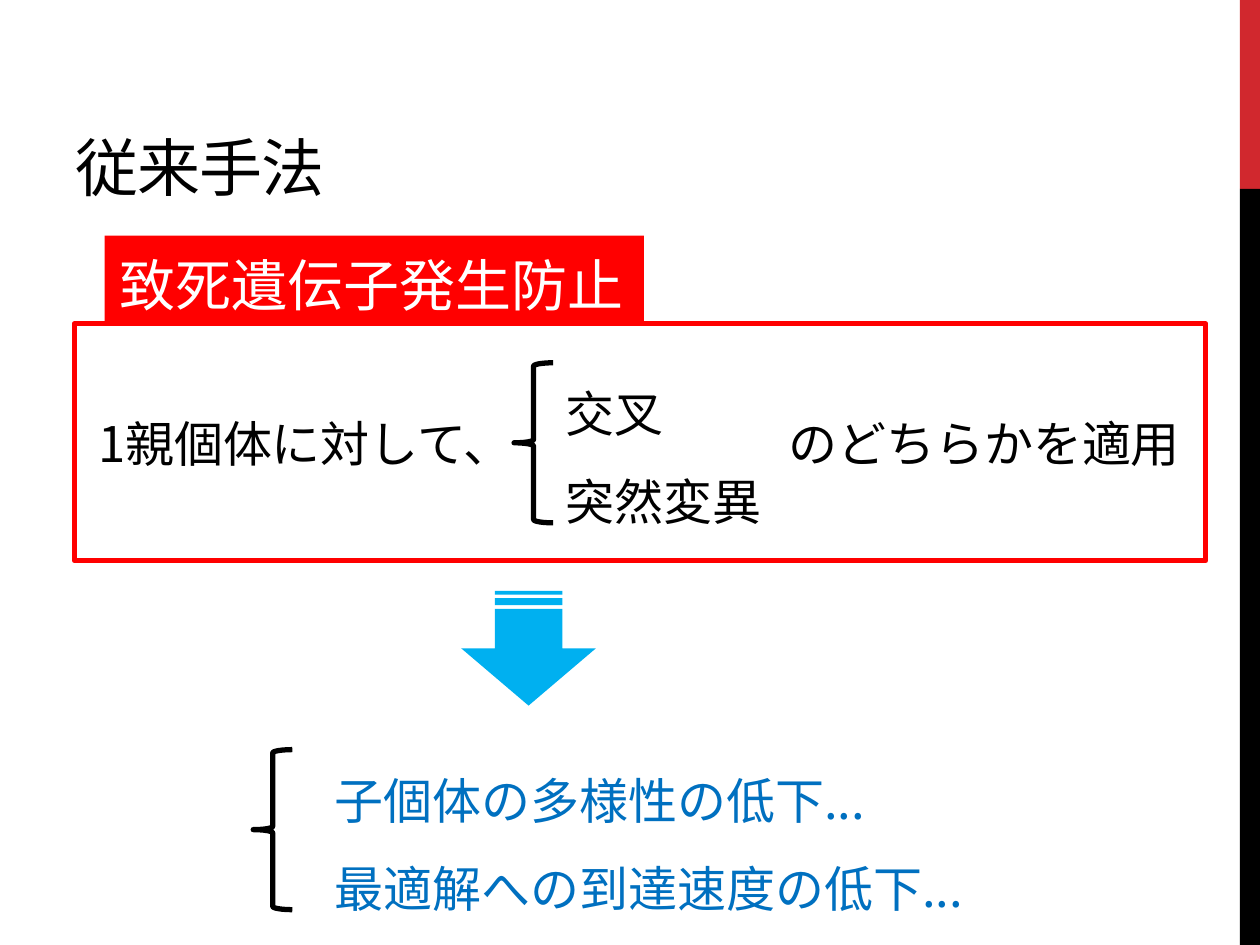
from lxml.etree import SubElement
from pptx import Presentation
from pptx.dml.color import RGBColor
from pptx.enum.shapes import MSO_SHAPE as Preset
from pptx.enum.text import MSO_ANCHOR as Anchor, MSO_AUTO_SIZE as AutoSize, PP_ALIGN as Align
from pptx.oxml.ns import qn
from pptx.util import Inches, Pt

FONT = "Noto Sans CJK JP"
BLACK, WHITE, RED, CRIMSON = "000000", "FFFFFF", "FF0000", "D1282E"
BLUE, SKY = "0070C0", "00B0F0"


def color(value):
    return RGBColor.from_string(value)


def apply_format(target, values):
    for name, value in values.items():
        setattr(target, name, value)


def add_preset(slide, preset, box, fill=None, line=None, rotation=0):
    shape = slide.shapes.add_shape(preset, *map(Inches, box))
    shape.shadow.inherit = False
    shape.rotation = rotation
    if fill:
        shape.fill.solid()
        shape.fill.fore_color.rgb = color(fill)
    else:
        shape.fill.background()
    if line:
        shape.line.color.rgb = color(line)
        shape.line.width = Pt(3)
    else:
        shape.line.fill.background()
    return shape


def write_lines(shape, lines, size=28, ink=BLACK, spacing=None, tracking=None, **frame_format):
    frame = shape.text_frame
    apply_format(frame, {"word_wrap": False, "auto_size": AutoSize.SHAPE_TO_FIT_TEXT,
                         "vertical_anchor": Anchor.TOP, **frame_format})
    for index, line in enumerate(lines):
        paragraph = frame.add_paragraph() if index else frame.paragraphs[0]
        apply_format(paragraph, {"alignment": Align.LEFT, "line_spacing": spacing})
        run = paragraph.add_run()
        run.text = line
        apply_format(run.font, {"size": Pt(size), "name": FONT})
        run.font.color.rgb = color(ink)
        properties = run.font._element
        SubElement(properties, qn("a:ea"), typeface=FONT)
        if tracking:
            properties.set("spc", str(round(tracking * 100)))


def add_text(slide, box, lines, **text_format):
    write_lines(slide.shapes.add_textbox(*map(Inches, box)), lines, **text_format)


def add_brace(slide, left, top):
    add_preset(slide, Preset.LEFT_BRACE, (left, top, 0.31, 1.27), line=BLACK)


def main():
    deck = Presentation()
    deck.slide_width, deck.slide_height = Inches(10), Inches(7.5)
    slide = deck.slides.add_slide(deck.slide_layouts[6])

    add_preset(slide, Preset.RECTANGLE, (9.84, 0, 0.16, 1.5), fill=CRIMSON)
    add_preset(slide, Preset.RECTANGLE, (9.84, 1.5, 0.16, 6), fill=BLACK)
    add_text(slide, (0.5, 0.17, 6.33, 1.5), ["従来手法"], size=36, tracking=-0.6,
             word_wrap=True, auto_size=AutoSize.NONE, vertical_anchor=Anchor.BOTTOM)

    heading = add_preset(slide, Preset.RECTANGLE, (0.83, 1.87, 4.28, 0.71), fill=RED)
    write_lines(heading, ["致死遺伝子発生防止"], size=32, ink=WHITE,
                margin_left=Inches(0.12), margin_top=Inches(0.12),
                margin_right=Inches(0.12), margin_bottom=Inches(0.04))

    add_brace(slide, 2.01, 5.95)
    add_text(slide, (2.56, 5.83, 5.78, 1.51),
             ["子個体の多様性の低下...", "最適解への到達速度の低下..."],
             ink=BLUE, spacing=1.5, word_wrap=True)

    add_text(slide, (0.68, 3.23, 3.59, 0.57), ["1親個体に対して、"])
    add_text(slide, (6.16, 3.23, 3.34, 0.57), ["のどちらかを適用"])
    add_brace(slide, 4.08, 2.88)
    add_text(slide, (4.39, 2.76, 1.77, 1.51), ["交叉", "突然変異"], spacing=1.5)
    add_preset(slide, Preset.RECTANGLE, (0.59, 2.57, 8.98, 1.88), line=RED)
    add_preset(slide, Preset.STRIPED_RIGHT_ARROW, (3.74, 4.61, 0.91, 1.07),
               fill=SKY, rotation=90)

    deck.save("out.pptx")


if __name__ == "__main__":
    main()
